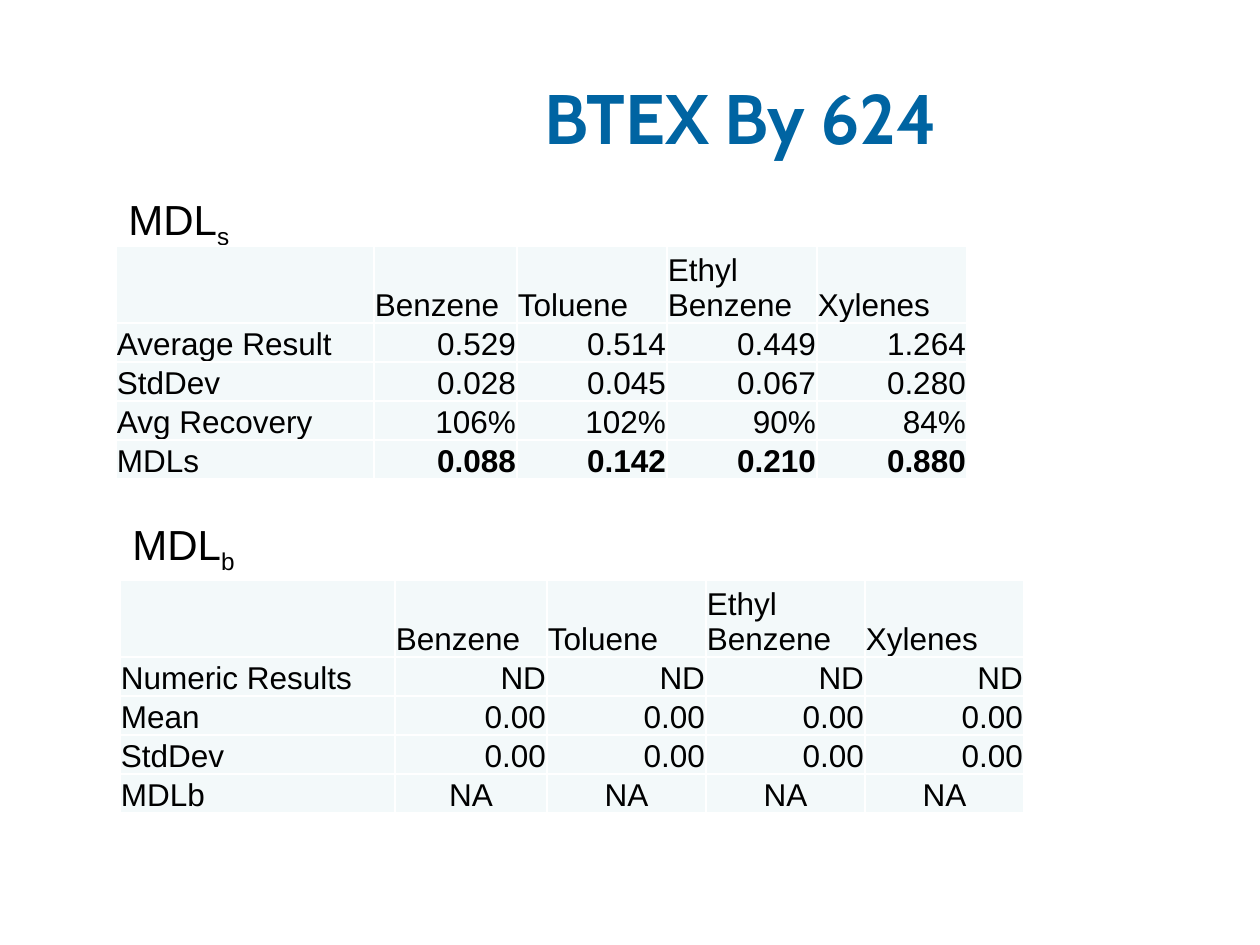
from lxml.etree import SubElement
from pptx import Presentation
from pptx.dml.color import RGBColor
from pptx.enum.text import MSO_ANCHOR, MSO_AUTO_SIZE, PP_ALIGN
from pptx.oxml.ns import qn
from pptx.util import Pt

EMU_PER_PX = 914400 / 126
BLACK, WHITE, BLUE, PALE = "000000", "FFFFFF", "0064A2", "F3F9FA"
HEADER = ["", "Benzene", "Toluene", "Ethyl Benzene", "Xylenes"]
SAMPLE_ROWS = [
    HEADER,
    ["Average Result", "0.529", "0.514", "0.449", "1.264"],
    ["StdDev", "0.028", "0.045", "0.067", "0.280"],
    ["Avg Recovery", "106%", "102%", "90%", "84%"],
    ["MDLs", "0.088", "0.142", "0.210", "0.880"],
]
BLANK_ROWS = [
    HEADER,
    ["Numeric Results"] + ["ND"] * 4,
    ["Mean"] + ["0.00"] * 4,
    ["StdDev"] + ["0.00"] * 4,
    ["MDLb"] + ["NA"] * 4,
]
HEADER_HEIGHT, ROW_HEIGHT = 77, 39


def px(length):
    return round(length * EMU_PER_PX)


def color(hex_string):
    return RGBColor.from_string(hex_string)


def set_font(paragraph, name, size, hex_string, bold=False):
    font = paragraph.font
    font.name, font.size, font.bold = name, Pt(size), bold
    font.color.rgb = color(hex_string)


def add_title(slide, text):
    title = slide.shapes.title
    title.left, title.top, title.width, title.height = px(284), px(38), px(914), px(158)
    title.text_frame.text = text
    title.text_frame.vertical_anchor = MSO_ANCHOR.MIDDLE
    paragraph = title.text_frame.paragraphs[0]
    paragraph.alignment = PP_ALIGN.CENTER
    set_font(paragraph, "Cabin", 40, BLUE, bold=True)


def add_limit_label(slide, left, top, subscript):
    box = slide.shapes.add_textbox(px(left), px(top), px(210), px(63))
    box.text_frame.word_wrap = True
    box.text_frame.auto_size = MSO_AUTO_SIZE.SHAPE_TO_FIT_TEXT
    paragraph = box.text_frame.paragraphs[0]
    paragraph.add_run().text = "MDL"
    run = paragraph.add_run()
    run.text = subscript
    run._r.get_or_add_rPr().set("baseline", "-25000")
    set_font(paragraph, "Arial", 24, BLACK)


def add_borders(cell):
    properties = cell._tc.get_or_add_tcPr()
    for side in ("lnL", "lnR", "lnT", "lnB"):
        line = SubElement(properties, qn(f"a:{side}"), w=str(Pt(1)))
        fill = SubElement(line, qn("a:solidFill"))
        SubElement(fill, qn("a:srgbClr"), val=WHITE)


def format_cell(cell, text, alignment, bold):
    add_borders(cell)
    cell.fill.solid()
    cell.fill.fore_color.rgb = color(PALE)
    cell.margin_left = cell.margin_right = cell.margin_top = px(1)
    cell.margin_bottom = 0
    cell.vertical_anchor = MSO_ANCHOR.BOTTOM
    cell.text = text
    paragraph = cell.text_frame.paragraphs[0]
    paragraph.alignment = alignment
    set_font(paragraph, "Arial", 18, BLACK, bold)


def add_results_table(slide, left, top, widths, rows, last_alignment, last_bold):
    """Add a table whose last row of values has its own alignment and weight."""
    last = len(rows) - 1
    height = HEADER_HEIGHT + ROW_HEIGHT * last
    table = slide.shapes.add_table(len(rows), len(widths), px(left), px(top),
                                   px(sum(widths)), px(height)).table
    table.first_row = table.horz_banding = False
    for column, width in zip(table.columns, widths):
        column.width = px(width)
    for row_index, texts in enumerate(rows):
        table.rows[row_index].height = px(ROW_HEIGHT if row_index else HEADER_HEIGHT)
        for column_index, text in enumerate(texts):
            is_value = row_index > 0 and column_index > 0
            is_last = is_value and row_index == last
            alignment = PP_ALIGN.RIGHT if is_value else PP_ALIGN.LEFT
            if is_last:
                alignment = last_alignment
            format_cell(table.cell(row_index, column_index), text, alignment,
                        is_last and last_bold)


def main():
    presentation = Presentation()
    presentation.slide_width, presentation.slide_height = px(1260), px(945)
    slide = presentation.slides.add_slide(presentation.slide_layouts[5])
    add_title(slide, "BTEX By 624")
    add_limit_label(slide, 116, 187, "s")
    add_results_table(slide, 116, 246, [258, 143, 150, 150, 150], SAMPLE_ROWS,
                      PP_ALIGN.RIGHT, last_bold=True)
    add_limit_label(slide, 120, 512, "b")
    add_results_table(slide, 120, 580, [275, 152, 159, 159, 159], BLANK_ROWS,
                      PP_ALIGN.CENTER, last_bold=False)
    presentation.save("out.pptx")


if __name__ == "__main__":
    main()
